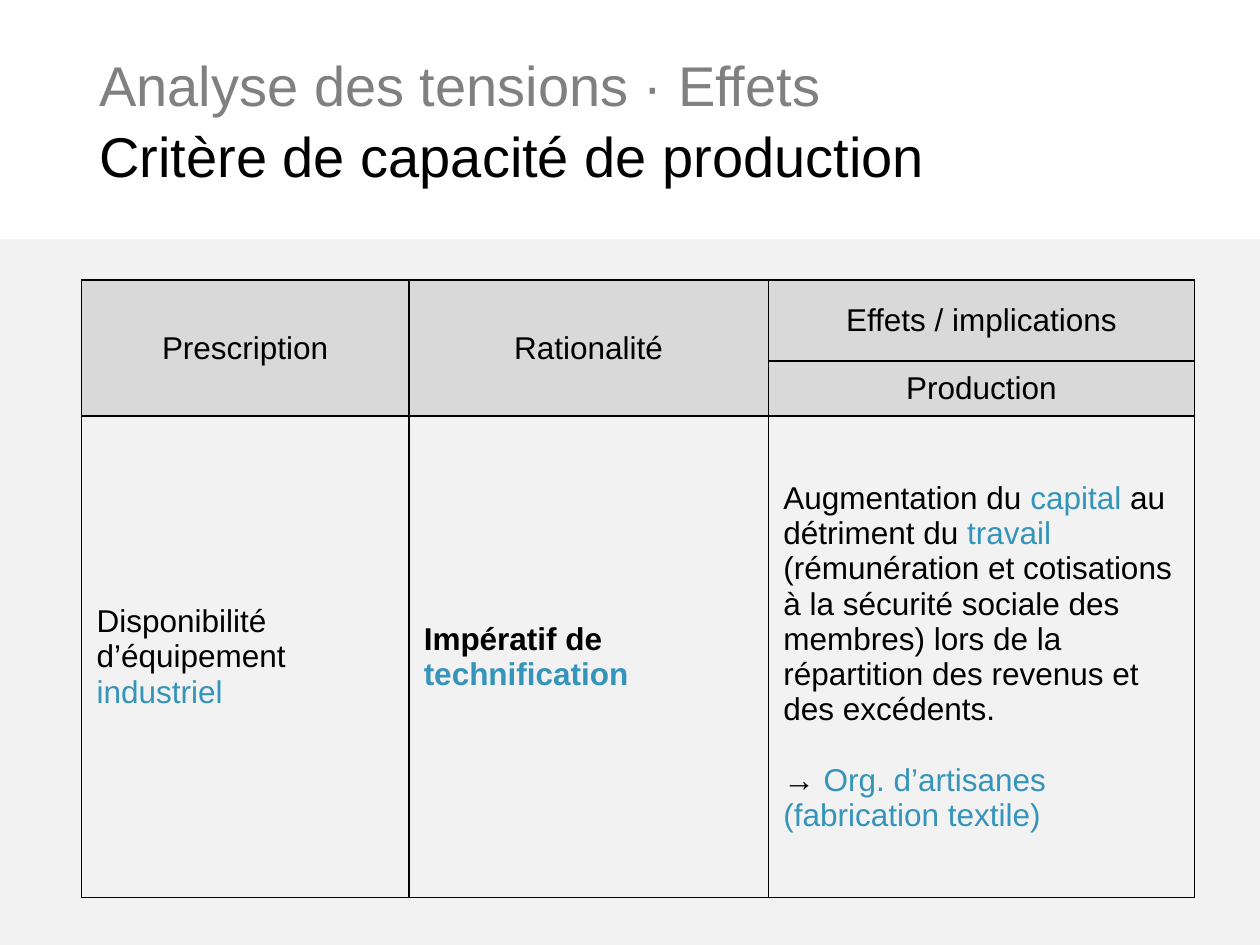
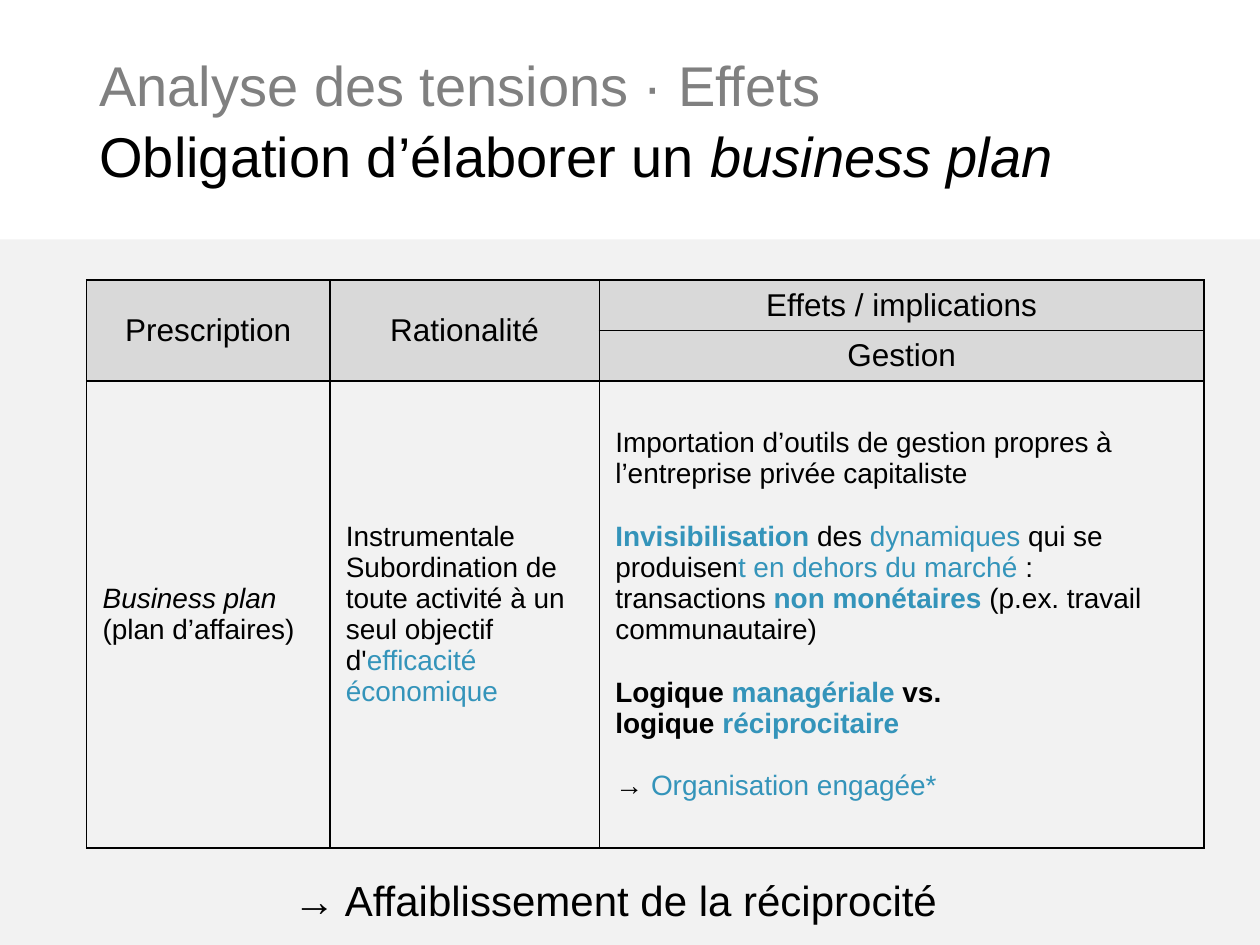
from dataclasses import dataclass

from lxml.etree import SubElement
from pptx import Presentation
from pptx.dml.color import RGBColor
from pptx.enum.shapes import MSO_SHAPE
from pptx.enum.text import MSO_ANCHOR, PP_ALIGN
from pptx.oxml.ns import qn
from pptx.util import Pt


@dataclass(frozen=True)
class Theme:
    """Colours, font and type sizes of the deck."""
    font: str = "Arial"
    black: str = "000000"
    grey: str = "808080"
    accent: str = "3494BA"
    band: str = "F2F2F2"
    head: str = "D9D9D9"
    title_size: int = 32
    head_size: int = 18
    note_size: int = 24


T = Theme()
STYLES = {
    "plain": {"color": T.black},
    "grey": {"color": T.grey},
    "accent": {"color": T.accent},
    "italic": {"color": T.black, "italic": True},
    "bold": {"color": T.black, "bold": True},
    "strong": {"color": T.accent, "bold": True},
}
SLIDE_W, SLIDE_H, BAND_TOP = 720, 540, 136.8
TITLE_BOX = (49.7, 26.6, 620.6, 85)
NOTE_BOX = (160.6, 496, 399.6, 36)


def set_attrs(target, values):
    """Set every attribute named in a dict."""
    for name, value in values.items():
        setattr(target, name, value)


def write(p, runs, size):
    """Fill a paragraph with (text, style) runs; a newline is a line break."""
    for text, style in runs:
        for i, line in enumerate(text.split("\n")):
            if i:
                p.add_line_break()
            if line:
                r = p.add_run()
                r.text = line
                fmt = dict(STYLES[style])
                r.font.color.rgb = RGBColor.from_string(fmt.pop("color"))
                set_attrs(r.font, {"name": T.font, "size": Pt(size), **fmt})


def add_text(s, box, runs, size, anchor, spacing=None):
    """Place a wrapped one-paragraph text box."""
    tf = s.shapes.add_textbox(*map(Pt, box)).text_frame
    set_attrs(tf, {"word_wrap": True, "vertical_anchor": anchor})
    p = tf.paragraphs[0]
    p.line_spacing = spacing
    write(p, runs, size)


def add_base(prs, title):
    """Start a slide with the grey band and the two-line title."""
    s = prs.slides.add_slide(prs.slide_layouts[6])
    sp = s.shapes.add_shape(MSO_SHAPE.RECTANGLE, 0, Pt(BAND_TOP),
                            Pt(SLIDE_W), Pt(SLIDE_H - BAND_TOP))
    sp.shadow.inherit = False
    sp.fill.solid()
    sp.fill.fore_color.rgb = RGBColor.from_string(T.band)
    sp.line.fill.background()
    runs = [("Analyse des tensions · Effets\n", "grey"), *title]
    add_text(s, TITLE_BOX, runs, T.title_size, MSO_ANCHOR.BOTTOM, 1.07)
    return s


def style_cell(cell, fill, inset):
    """Give a cell its black borders, fill, margins and anchor."""
    tcPr = cell._tc.get_or_add_tcPr()
    for side in "LRTB":
        ln = SubElement(tcPr, qn(f"a:ln{side}"), w=str(Pt(1)))
        SubElement(SubElement(ln, qn("a:solidFill")), qn("a:srgbClr"), val=T.black)
    if fill:
        cell.fill.solid()
        cell.fill.fore_color.rgb = RGBColor.from_string(fill)
    else:
        cell.fill.background()
    set_attrs(cell, {"margin_left": Pt(inset), "margin_right": Pt(inset),
                     "margin_top": Pt(3.6), "margin_bottom": Pt(3.6),
                     "vertical_anchor": MSO_ANCHOR.MIDDLE})


def add_effects_table(s, left, top, cols, rows, inset, effect, body, size):
    """Place the table: two header rows, then one cell of (gap, runs) per column."""
    tbl = s.shapes.add_table(3, 3, Pt(left), Pt(top), Pt(sum(cols)), Pt(sum(rows))).table
    set_attrs(tbl, {"first_row": False, "horz_banding": False})
    for col, width in zip(tbl.columns, cols):
        col.width = Pt(width)
    for row, height in zip(tbl.rows, rows):
        row.height = Pt(height)
    for i in range(9):
        style_cell(tbl.cell(i // 3, i % 3), T.head if i < 6 else None, inset)
    for c in (0, 1):
        tbl.cell(0, c).merge(tbl.cell(1, c))
    heads = {(0, 0): "Prescription", (0, 1): "Rationalité",
             (0, 2): "Effets / implications", (1, 2): effect}
    for pos, text in heads.items():
        p = tbl.cell(*pos).text_frame.paragraphs[0]
        p.alignment = PP_ALIGN.CENTER
        write(p, [(text, "plain")], T.head_size)
    for c, paragraphs in enumerate(body):
        tf = tbl.cell(2, c).text_frame
        for i, (gap, runs) in enumerate(paragraphs):
            p = tf.add_paragraph() if i else tf.paragraphs[0]
            if gap:
                p.space_before = Pt(gap)
            write(p, runs, size)


def production_slide(prs):
    """Build the slide on production capacity."""
    s = add_base(prs, [("Critère de capacité de production", "plain")])
    body = [
        [(0, [("Disponibilité d’équipement ", "plain"), ("industriel", "accent")])],
        [(0, [("Impératif de ", "bold"), ("technification", "strong")])],
        [(0, [("Augmentation du ", "plain"), ("capital", "accent"),
              (" au détriment du ", "plain"), ("travail", "accent"),
              (" (rémunération et cotisations à la sécurité sociale des membres)"
               " lors de la répartition des revenus et des excédents.", "plain")]),
         (20, [("→ ", "plain"), ("Org. d’artisanes", "accent")]),
         (0, [("(fabrication textile)", "accent")])],
    ]
    add_effects_table(s, 46.6, 160, (187, 205.5, 243.5), (46.3, 31.5, 275.2),
                      8.6, "Production", body, 18)


def business_plan_slide(prs):
    """Build the slide on the business plan."""
    s = add_base(prs, [("Obligation d’élaborer un ", "plain"), ("business plan", "italic")])
    body = [
        [(0, [("Business plan", "italic")]), (0, [("(plan d’affaires)", "plain")])],
        [(0, [("Instrumentale", "plain")]),
         (0, [("Subordination de toute activité à un seul objectif d'", "plain"),
              ("efficacité économique", "accent")])],
        [(0, [("Importation d’outils de gestion propres à l’entreprise privée"
               " capitaliste", "plain")]),
         (18, [("Invisibilisation ", "strong"), ("des", "plain"), (" dynamiques", "accent"),
               (" qui se produisen", "plain"), ("t en dehors du marché ", "accent"),
               (": transactions ", "plain"), ("non monétaires ", "strong"),
               ("(p.ex. travail communautaire)", "plain")]),
         (18, [("Logique ", "bold"), ("managériale", "strong"),
               (" vs. \nlogique ", "bold"), ("réciprocitaire", "strong")]),
         (18, [("→ ", "plain"), ("Organisation engagée*", "accent")])],
    ]
    add_effects_table(s, 49.5, 160, (139, 154, 345.5), (28, 28, 267),
                      9.2, "Gestion", body, 16)
    add_text(s, NOTE_BOX, [("→ Affaiblissement de la réciprocité", "plain")],
             T.note_size, MSO_ANCHOR.TOP)


def main():
    """Build and save the deck."""
    prs = Presentation()
    set_attrs(prs, {"slide_width": Pt(SLIDE_W), "slide_height": Pt(SLIDE_H)})
    production_slide(prs)
    business_plan_slide(prs)
    prs.save("out.pptx")


if __name__ == "__main__":
    main()
